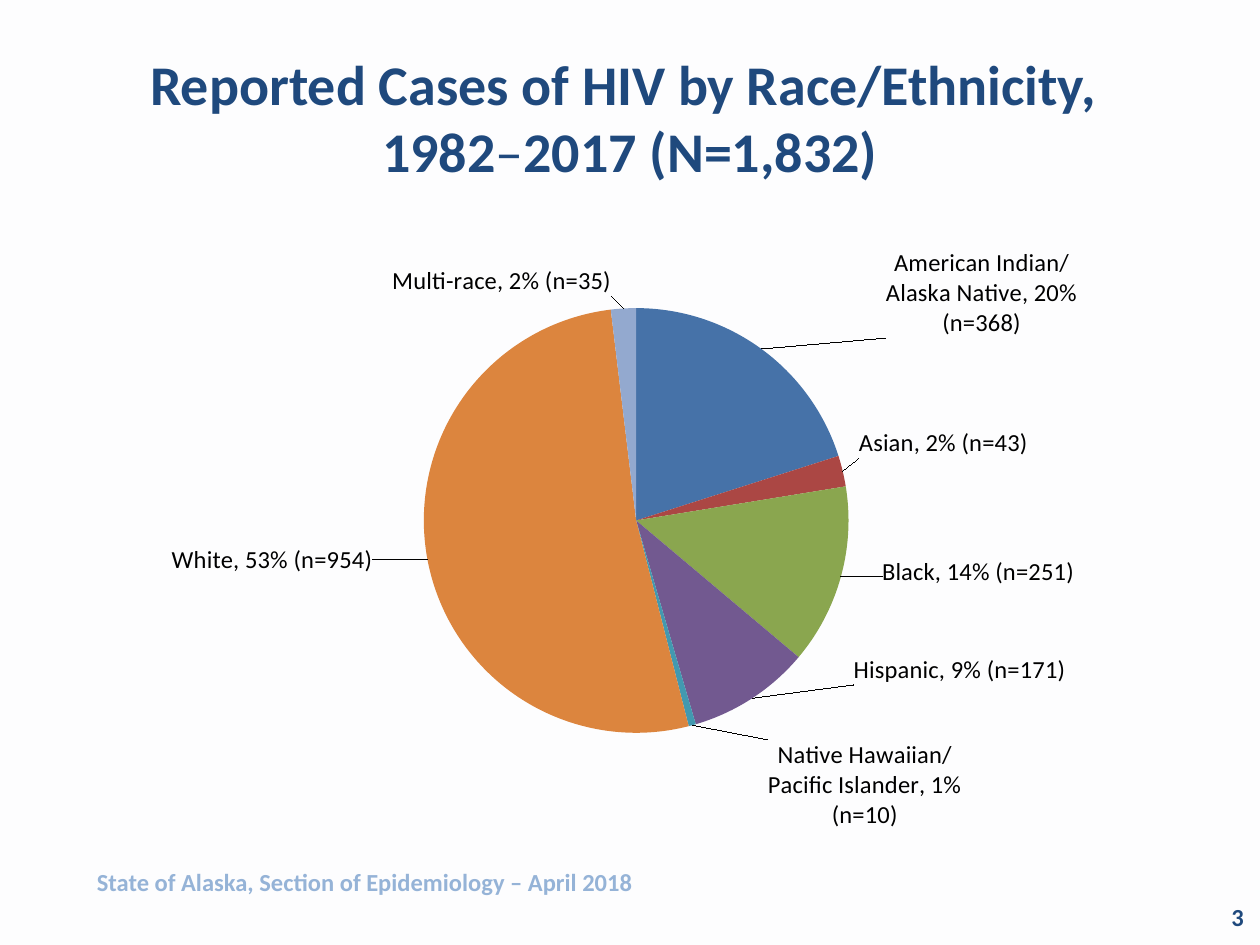
from dataclasses import dataclass

from lxml import etree
from pptx import Presentation
from pptx import util as u
from pptx.chart.data import CategoryChartData
from pptx.dml.color import RGBColor
from pptx.enum import chart as charts, text
from pptx.oxml.ns import qn

FONT = "Calibri"
NAVY = RGBColor(0x1F, 0x49, 0x7D)
PALE_BLUE = RGBColor(0x95, 0xB3, 0xD7)
BLACK = RGBColor(0, 0, 0)
PAPER = RGBColor(0xFD, 0xFD, 0xFE)
WIDTH, HEIGHT = u.Inches(10), u.Inches(7.5)


@dataclass(frozen=True)
class Slice:
    """One group; dx and dy move its label, as shares of the chart's size."""
    name: str
    cases: int
    percent: int
    color: RGBColor
    dx: float
    dy: float

    @property
    def label(self) -> str:
        return f"{self.name}, {self.percent}% (n={self.cases})"


SLICES = [
    Slice("American Indian/\nAlaska Native", 368, 20, RGBColor(0x46, 0x72, 0xA8), 0.106, -0.008),
    Slice("Asian", 43, 2, RGBColor(0xAB, 0x47, 0x44), 0.008, -0.018),
    Slice("Black", 251, 14, RGBColor(0x8A, 0xA6, 0x4F), 0.03, -0.035),
    Slice("Hispanic", 171, 9, RGBColor(0x72, 0x59, 0x90), 0.086, -0.08),
    Slice("Native Hawaiian/\nPacific Islander", 10, 1, RGBColor(0x42, 0x99, 0xB0), 0.065, 0.012),
    Slice("White", 954, 53, RGBColor(0xDC, 0x85, 0x3E), -0.042, -0.025),
    Slice("Multi-race", 35, 2, RGBColor(0x93, 0xA9, 0xCF), -0.107, -0.008),
]


def place(left: float, top: float, width: float, height: float) -> tuple:
    """Turn shares of the slide's size into lengths."""
    return int(left * WIDTH), int(top * HEIGHT), int(width * WIDTH), int(height * HEIGHT)


def style(font, size: float, color: RGBColor, bold: bool = False) -> None:
    font.name, font.size, font.bold = FONT, u.Pt(size), bold
    font.color.rgb = color


def add_text(page, content: str, area: tuple, *, color: RGBColor,
             align=text.PP_ALIGN.LEFT, anchor=text.MSO_ANCHOR.TOP) -> None:
    frame = page.shapes.add_textbox(*area).text_frame
    frame.word_wrap, frame.vertical_anchor = True, anchor
    para = frame.paragraphs[0]
    para.alignment = align
    span = para.add_run()
    span.text = content
    style(span.font, 14, color, bold=True)


def add_title(page) -> None:
    title = page.shapes.title
    title.left, title.top, title.width, title.height = place(0.05, 0.04, 0.9, 1 / 6)
    frame = title.text_frame
    frame.vertical_anchor = text.MSO_ANCHOR.MIDDLE
    para = frame.paragraphs[0]
    para.alignment = text.PP_ALIGN.CENTER
    para.text = "Reported Cases of HIV by Race/Ethnicity, \v1982"
    for content in ("–", "2017 (N=1,832)"):
        para.add_run().text = content
    for span in para.runs:
        style(span.font, 32, NAVY, bold=span.text != "–")


def manual_layout(**settings):
    layout = etree.Element(qn("c:layout"))
    manual = etree.SubElement(layout, qn("c:manualLayout"))
    for name, value in settings.items():
        etree.SubElement(manual, qn(f"c:{name}")).set("val", str(value))
    return layout


def add_pie(page) -> None:
    data = CategoryChartData()
    data.categories = [group.name for group in SLICES]
    data.add_series("Series 1", [group.cases for group in SLICES])
    chart = page.shapes.add_chart(
        charts.XL_CHART_TYPE.PIE, *place(0.05, 0.233, 0.9, 0.66), data).chart
    chart.has_legend = chart.has_title = False
    style(chart.font, 18, BLACK)
    chart.plots[0].vary_by_categories = True

    series = chart.plots[0].series[0]
    labels = series.data_labels
    labels.show_value = labels.show_percentage = labels.show_category_name = True
    labels.position = charts.XL_LABEL_POSITION.OUTSIDE_END
    style(labels.font, 14, BLACK)
    for index, group in enumerate(SLICES):
        point = series.points[index]
        point.format.fill.solid()
        point.format.fill.fore_color.rgb = group.color
        frame = point.data_label.text_frame
        frame.text = group.label
        for para in frame.paragraphs:
            for span in para.runs:
                style(span.font, 14, BLACK)
        point.data_label.position = charts.XL_LABEL_POSITION.OUTSIDE_END

    space = chart._chartSpace
    for group, label in zip(SLICES, space.iter(qn("c:dLbl"))):
        label.find(qn("c:idx")).addnext(manual_layout(x=group.dx, y=group.dy))
    plot_area = space.find(f".//{qn('c:plotArea')}")
    for old in plot_area.findall(qn("c:layout")):
        plot_area.remove(old)
    plot_area.insert(0, manual_layout(
        layoutTarget="inner", xMode="edge", yMode="edge", x=0.318, y=0.141, w=0.375, h=0.681))


def main() -> None:
    deck = Presentation()
    deck.slide_width, deck.slide_height = WIDTH, HEIGHT
    page = deck.slides.add_slide(deck.slide_layouts.get_by_name("Title Only"))
    page.background.fill.solid()
    page.background.fill.fore_color.rgb = PAPER
    add_title(page)
    add_text(page, "3", place(0.764, 0.944, 0.233, 0.053), color=NAVY,
             align=text.PP_ALIGN.RIGHT, anchor=text.MSO_ANCHOR.MIDDLE)
    add_text(page, "State of Alaska, Section of Epidemiology – April 2018",
             place(0.067, 0.911, 0.7, 0.045), color=PALE_BLUE)
    add_pie(page)
    deck.save("out.pptx")


if __name__ == "__main__":
    main()
